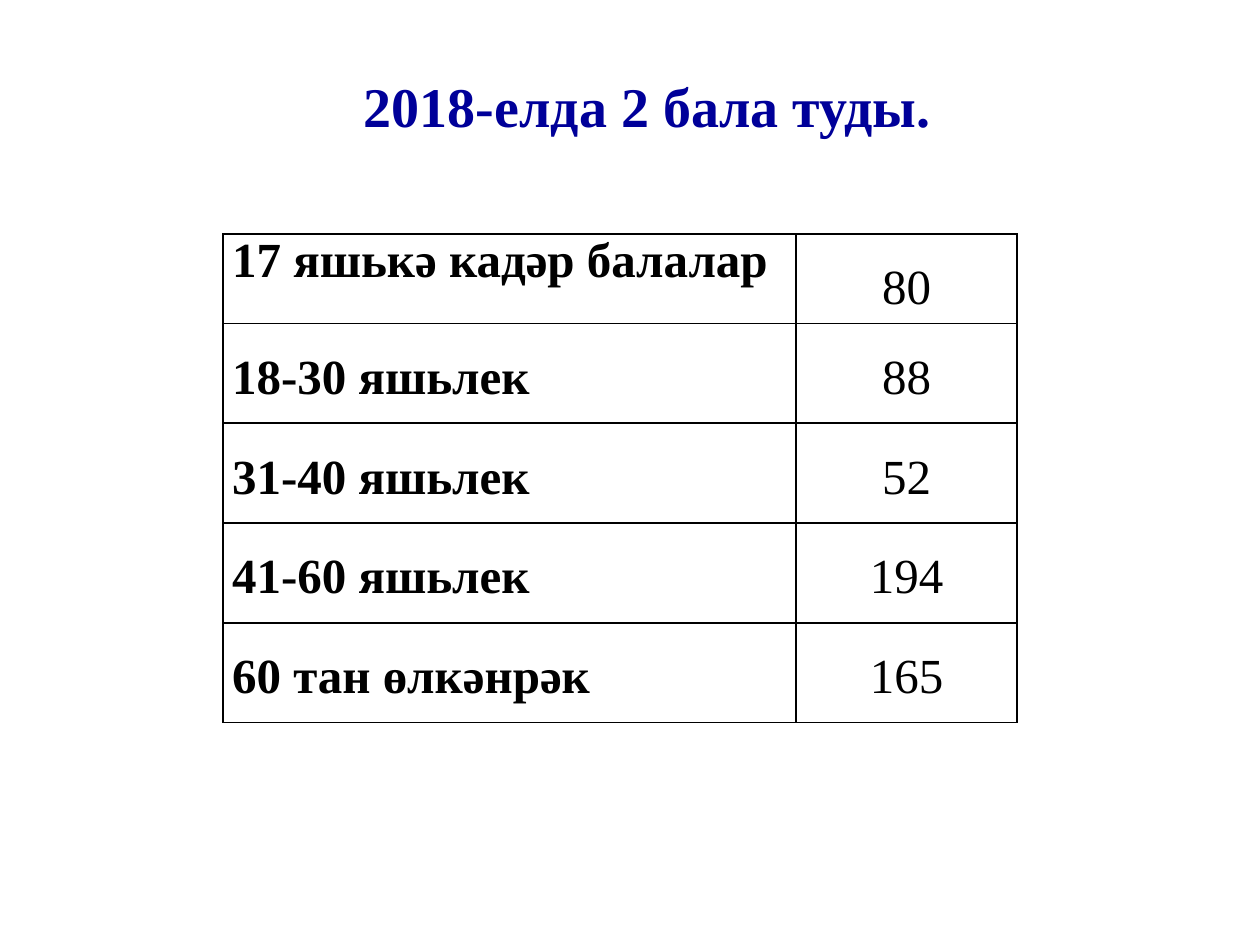
from lxml import etree
from pptx import Presentation
from pptx.dml.color import RGBColor
from pptx.enum.text import MSO_AUTO_SIZE, PP_ALIGN
from pptx.oxml.ns import qn
from pptx.util import Cm, Pt

BLACK = RGBColor(0x00, 0x00, 0x00)
NAVY = RGBColor(0x00, 0x00, 0x99)
FONT = "Times New Roman"
AGE_GROUPS = [
    ("17 яшькә кадәр балалар", "80"),
    ("18-30 яшьлек", "88"),
    ("31-40 яшьлек", "52"),
    ("41-60 яшьлек", "194"),
    ("60 тан өлкәнрәк", "165"),
]


def style_text(paragraph, size, color, bold, align):
    """Set the alignment of a paragraph and the font of its runs."""
    paragraph.alignment = align
    for run in paragraph.runs:
        run.font.name = FONT
        run.font.size = Pt(size)
        run.font.bold = bold
        run.font.color.rgb = color


def add_borders(cell):
    """Draw a thin black line on all four sides of a cell."""
    properties = cell._tc.get_or_add_tcPr()
    for position, side in enumerate(("a:lnL", "a:lnR", "a:lnT", "a:lnB")):
        line = etree.Element(qn(side), w=str(Pt(1)))
        fill = etree.SubElement(line, qn("a:solidFill"))
        etree.SubElement(fill, qn("a:srgbClr"), val=str(BLACK))
        properties.insert(position, line)


def add_title(slide, left, top, width, height):
    """Place the centred heading in the given box."""
    heading = slide.shapes.add_textbox(left, top, width, height).text_frame
    heading.word_wrap = True
    heading.auto_size = MSO_AUTO_SIZE.SHAPE_TO_FIT_TEXT
    heading.text = "2018-елда 2 бала туды."
    style_text(heading.paragraphs[0], 32, NAVY, True, PP_ALIGN.CENTER)


def add_age_table(slide, left, top, width, height):
    """Place the table of residents by age group in the given box."""
    ages = slide.shapes.add_table(len(AGE_GROUPS), 2, left, top, width, height).table
    ages.first_row = ages.horz_banding = False
    ages.columns[0].width = Cm(11.55)
    ages.columns[1].width = width - Cm(11.55)
    first_height = Cm(1.8)
    for row_index, group in enumerate(AGE_GROUPS):
        ages.rows[row_index].height = (
            (height - first_height) // (len(AGE_GROUPS) - 1) if row_index else first_height
        )
        for column, content in enumerate(group):
            cell = ages.cell(row_index, column)
            cell.fill.background()
            cell.margin_left = cell.margin_right = Cm(0.18)
            cell.margin_top = cell.margin_bottom = 0
            cell.text_frame.text = content
            paragraph = cell.text_frame.paragraphs[0]
            if row_index or column:
                paragraph.line_spacing = 1.5
            align = PP_ALIGN.CENTER if column else PP_ALIGN.LEFT
            style_text(paragraph, 28, BLACK, column == 0, align)
            add_borders(cell)


def main():
    """Build the slide and save it."""
    deck = Presentation()
    deck.slide_width, deck.slide_height = Cm(25.4), Cm(19.05)
    slide = deck.slides.add_slide(deck.slide_layouts[6])
    add_age_table(slide, Cm(4.5), Cm(4.72), Cm(16), Cm(9.85))
    add_title(slide, Cm(6.7), Cm(1.32), Cm(12.7), Cm(1.62))
    deck.save("out.pptx")


if __name__ == "__main__":
    main()
